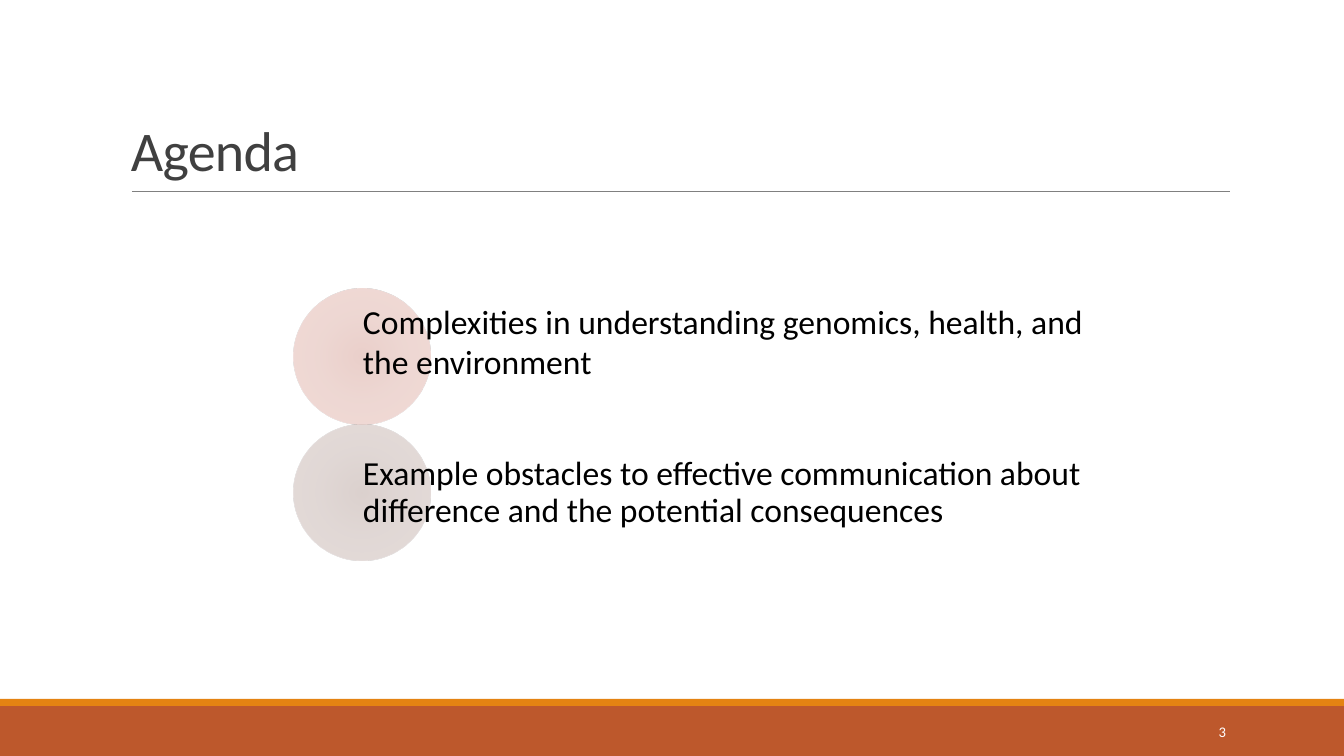
from dataclasses import dataclass

from lxml import etree
from pptx import Presentation
from pptx.dml.color import RGBColor
from pptx.enum.shapes import MSO_CONNECTOR, MSO_SHAPE
from pptx.enum.text import MSO_ANCHOR, MSO_AUTO_SIZE, PP_ALIGN
from pptx.oxml.ns import qn
from pptx.util import Emu, Pt

RECT, OVAL = MSO_SHAPE.RECTANGLE, MSO_SHAPE.OVAL
LINE = MSO_CONNECTOR.STRAIGHT
MIDDLE, BOTTOM = MSO_ANCHOR.MIDDLE, MSO_ANCHOR.BOTTOM
LEFT, RIGHT = PP_ALIGN.LEFT, PP_ALIGN.RIGHT
NO_FIT = MSO_AUTO_SIZE.NONE

FONT = "Calibri"
BLACK = RGBColor(0x00, 0x00, 0x00)
WHITE = RGBColor(0xFF, 0xFF, 0xFF)
DARK = RGBColor(0x40, 0x40, 0x40)
GRAY = RGBColor(0x80, 0x80, 0x80)
RUST = RGBColor(0xBD, 0x58, 0x2C)
ORANGE = RGBColor(0xE4, 0x83, 0x12)
ROSE = (RGBColor(0xD7, 0xA1, 0x97), RGBColor(0xDE, 0xB1, 0xA8),
        RGBColor(0xE6, 0xB7, 0xAE))
TAUPE = (RGBColor(0xB9, 0xA4, 0x9E), RGBColor(0xC4, 0xB2, 0xAD),
         RGBColor(0xCC, 0xBA, 0xB5))
STOPS = (0, 45, 100)

WIDTH, HEIGHT = 1344, 756
DISC = 136
DISC_X, DISC_Y = 294, 289
TEXT_W = 728


@dataclass(frozen=True)
class Band:
    top: int
    height: int
    color: RGBColor


@dataclass(frozen=True)
class Topic:
    text: str
    shades: tuple[RGBColor, ...]
    spacing: float
    foot: int


BANDS = [Band(706, 50, RUST), Band(699, 7, ORANGE)]
TOPICS = [
    Topic("Complexities in understanding genomics, health, and the environment",
          ROSE, 1.0, 35),
    Topic("Example obstacles to effective communication about difference "
          "and the potential consequences", TAUPE, 0.9, 3),
]


def px(count: int) -> Emu:
    return Emu(round(count * 914400 / 100.8))


def box(left: int, top: int, width: int, height: int) -> tuple[Emu, ...]:
    return px(left), px(top), px(width), px(height)


def write(shape, text: str, size: float, color: RGBColor, anchor=MIDDLE,
          align=LEFT, spacing: float = 1.0, pads=(10, 5, 10, 5)):
    """Fill the shape with one paragraph and return its run."""
    frame = shape.text_frame
    frame.word_wrap = True
    frame.auto_size = NO_FIT
    frame.vertical_anchor = anchor
    (frame.margin_left, frame.margin_top,
     frame.margin_right, frame.margin_bottom) = map(px, pads)
    para = frame.paragraphs[0]
    para.alignment = align
    para.line_spacing = spacing
    run = para.add_run()
    run.text = text
    run.font.name = FONT
    run.font.size = Pt(size)
    run.font.color.rgb = color
    return run


def glow(shape, shades: tuple[RGBColor, ...]) -> None:
    """Give the shape a half-clear round gradient."""
    shape.fill.gradient()
    grad = shape._element.spPr.find(qn("a:gradFill"))
    grad.clear()
    stops = etree.SubElement(grad, qn("a:gsLst"))
    for place, shade in zip(STOPS, shades):
        stop = etree.SubElement(stops, qn("a:gs"), pos=str(place * 1000))
        color = etree.SubElement(stop, qn("a:srgbClr"), val=str(shade))
        etree.SubElement(color, qn("a:alpha"), val="50000")
    ring = etree.SubElement(grad, qn("a:path"), path="circle")
    etree.SubElement(ring, qn("a:fillToRect"),
                     {side: "100000" for side in "ltrb"})


def add_band(slide, band: Band) -> None:
    shape = slide.shapes.add_shape(RECT, *box(0, band.top, WIDTH, band.height))
    shape.shadow.inherit = False
    shape.fill.solid()
    shape.fill.fore_color.rgb = band.color
    shape.line.fill.background()


def add_rule(slide) -> None:
    rule = slide.shapes.add_connector(LINE, px(132), px(191), px(1230), px(191))
    rule.line.color.rgb = GRAY
    rule.line.width = Pt(0.5)
    etree.SubElement(rule._element.spPr, qn("a:effectLst"))


def add_title(slide) -> None:
    title = slide.shapes.title
    title.left, title.top, title.width, title.height = box(121, 31, 1109, 160)
    run = write(title, "Agenda", 40, DARK, BOTTOM, spacing=0.85,
                pads=(10, 5, 10, 8))
    run.font._element.set("spc", "-50")


def add_topic(slide, topic: Topic, top: int) -> None:
    disc = slide.shapes.add_shape(OVAL, *box(DISC_X, top, DISC, DISC))
    disc.shadow.inherit = False
    disc.line.fill.background()
    glow(disc, topic.shades)
    label = slide.shapes.add_textbox(
        *box(DISC_X + DISC // 2 + 1, top, TEXT_W, DISC))
    write(label, topic.text, 24, BLACK, spacing=topic.spacing,
          pads=(0, 3, 0, topic.foot))


def main() -> None:
    deck = Presentation()
    deck.slide_width, deck.slide_height = px(WIDTH), px(HEIGHT)
    slide = deck.slides.add_slide(deck.slide_layouts[5])
    for band in BANDS:
        add_band(slide, band)
    add_rule(slide)
    add_title(slide)
    for row, topic in enumerate(TOPICS):
        add_topic(slide, topic, DISC_Y + row * DISC)
    number = slide.shapes.add_textbox(*box(1092, 712, 144, 40))
    write(number, "3", 10.5, WHITE, align=RIGHT)
    deck.save("out.pptx")


if __name__ == "__main__":
    main()
